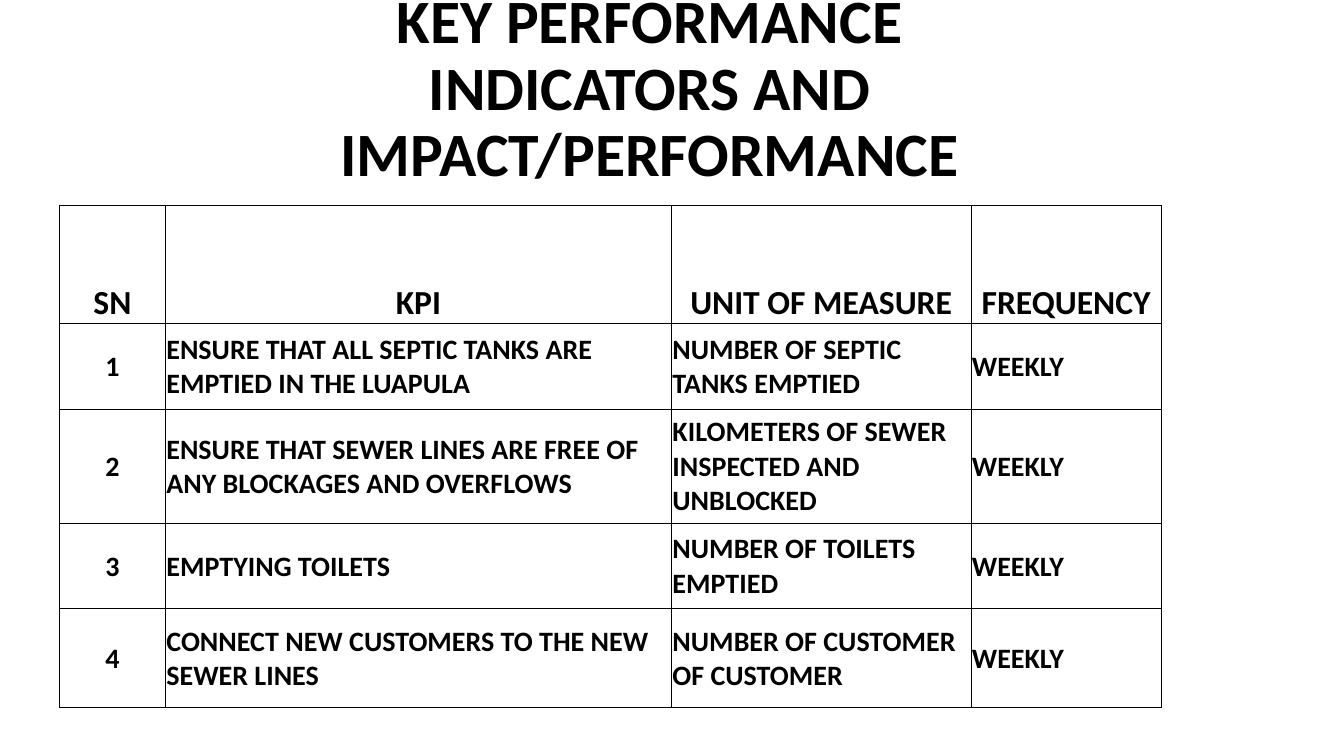
from lxml.etree import SubElement
from pptx import Presentation
from pptx.dml.color import RGBColor
from pptx.enum.text import MSO_ANCHOR, PP_ALIGN
from pptx.oxml.ns import qn
from pptx.util import Inches, Pt

THEME = {
    "font": "Calibri",
    "ink": "000000",
    "title": 44,
    "head": 24,
    "body": 20,
    "rule": 0.5,
}

COLS = [1.05, 5.02, 2.97, 1.89]
ROWS = [1.17, 0.85, 1.13, 0.85, 0.98]
HEAD = ["SN", "KPI", "UNIT OF MEASURE", "FREQUENCY"]
GOALS = [
    ("ENSURE THAT ALL SEPTIC TANKS ARE EMPTIED IN THE LUAPULA",
     "NUMBER OF SEPTIC TANKS EMPTIED"),
    ("ENSURE THAT SEWER LINES ARE FREE OF ANY BLOCKAGES AND OVERFLOWS",
     "KILOMETERS OF SEWER INSPECTED AND UNBLOCKED"),
    ("EMPTYING TOILETS", "NUMBER OF TOILETS EMPTIED"),
    ("CONNECT NEW CUSTOMERS TO THE NEW SEWER LINES",
     "NUMBER OF CUSTOMER OF CUSTOMER"),
]
CELL = {
    "margin_left": Inches(0.01),
    "margin_right": Inches(0.01),
    "margin_top": Inches(0.01),
    "margin_bottom": 0,
}


def write(frame, text, size, align):
    """Fill the first paragraph of a text frame with bold text."""
    para = frame.paragraphs[0]
    para.alignment = align
    run = para.add_run()
    run.text = text
    look = {"name": THEME["font"], "size": Pt(size), "bold": True}
    for key, value in look.items():
        setattr(run.font, key, value)
    run.font.color.rgb = RGBColor.from_string(THEME["ink"])
    return para


def border(cell):
    """Draw a thin line on all four sides of a cell."""
    props = cell._tc.get_or_add_tcPr()
    for side in ("a:lnL", "a:lnR", "a:lnT", "a:lnB"):
        line = SubElement(props, qn(side), w=str(Pt(THEME["rule"])))
        fill = SubElement(line, qn("a:solidFill"))
        SubElement(fill, qn("a:srgbClr"), val=THEME["ink"])


deck = Presentation()
deck.slide_width, deck.slide_height = Inches(13.33), Inches(7.5)
slide = deck.slides.add_slide(deck.slide_layouts[6])

# Title
box = slide.shapes.add_textbox(
    Inches(2.39), Inches(0.17), Inches(8.11), Inches(1.45))
frame = box.text_frame
frame.word_wrap = True
frame.vertical_anchor = MSO_ANCHOR.MIDDLE
title = write(frame, "KEY PERFORMANCE INDICATORS AND IMPACT/PERFORMANCE",
              THEME["title"], PP_ALIGN.CENTER)
title.line_spacing = 0.9

# Indicator table
table = slide.shapes.add_table(
    len(ROWS), len(COLS), Inches(0.59), Inches(2.04),
    Inches(sum(COLS)), Inches(sum(ROWS))).table
table.first_row = table.horz_banding = False
for col, width in zip(table.columns, COLS):
    col.width = Inches(width)
for row, height in zip(table.rows, ROWS):
    row.height = Inches(height)

lines = [HEAD] + [[str(n), goal, unit, "WEEKLY"]
                  for n, (goal, unit) in enumerate(GOALS, 1)]
for r, line in enumerate(lines):
    top = r == 0
    for c, text in enumerate(line):
        cell = table.cell(r, c)
        for key, value in CELL.items():
            setattr(cell, key, value)
        cell.vertical_anchor = MSO_ANCHOR.BOTTOM if top else MSO_ANCHOR.MIDDLE
        border(cell)
        cell.fill.background()
        write(cell.text_frame, text, THEME["head" if top else "body"],
              PP_ALIGN.CENTER if top or c == 0 else PP_ALIGN.LEFT)

deck.save("out.pptx")
